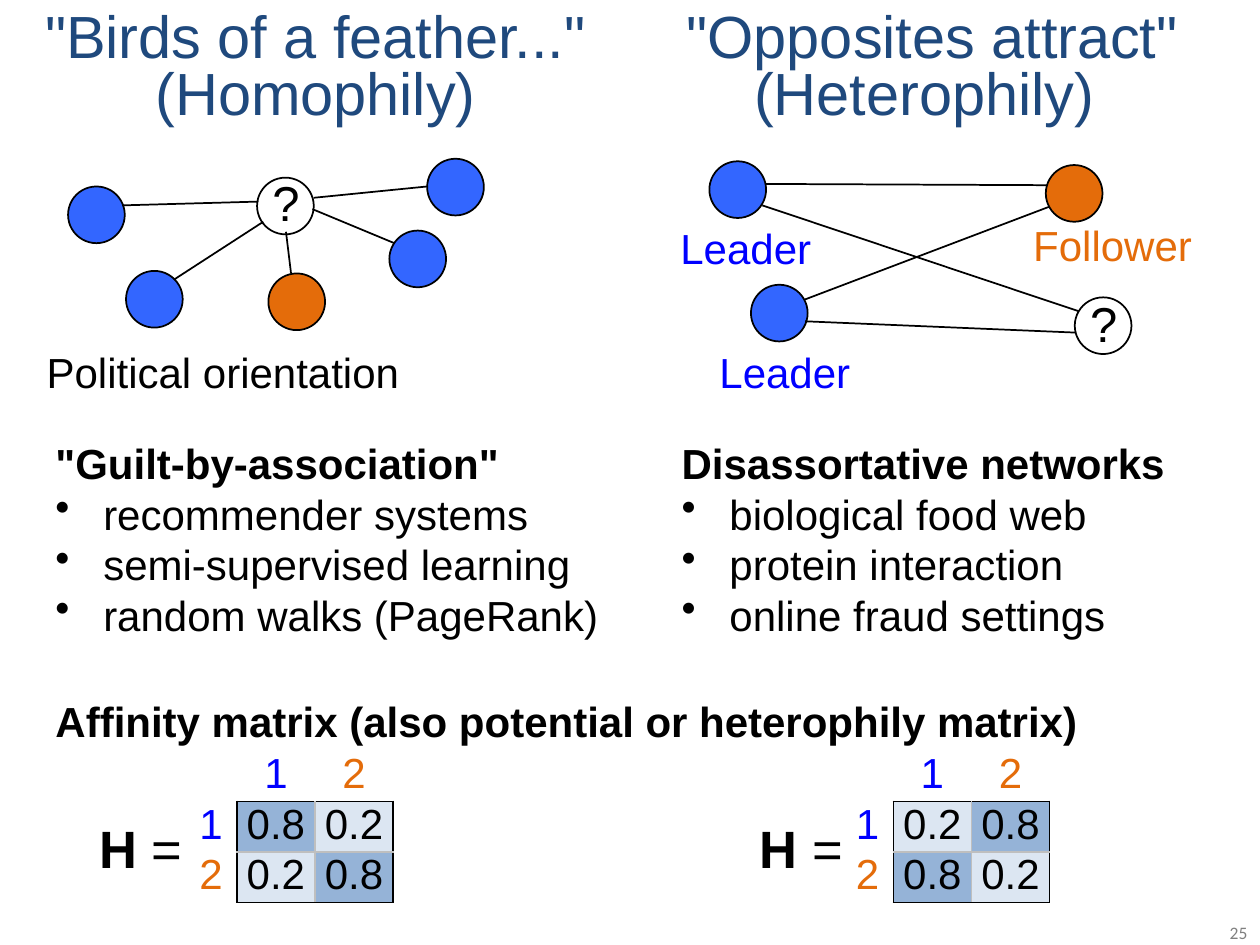
from lxml import etree
from pptx import Presentation
from pptx import util as u
from pptx.dml.color import RGBColor
from pptx.enum import shapes, text
from pptx.oxml.ns import qn

PX = 9144
BLACK, WHITE, GREY = "000000", "FFFFFF", "BFBFBF"
BLUE, ORANGE, NAVY = "0000FF", "E46C0A", "1F497D"
NODE, HIGH, LOW = "3366FF", "95B3D7", "DCE6F2"
LEFT, CENTER = text.PP_ALIGN.LEFT, text.PP_ALIGN.CENTER


def rgb(value):
    return RGBColor.from_string(value)


class Canvas:
    """Holds the style and the current slide, in hundredths of an inch."""

    font = "Arial"
    body = 24
    line_width = u.Pt(1)

    def __init__(self, page):
        self.page = page

    def lengths(self, *values):
        return [u.Emu(value * PX) for value in values]

    def style(self, span, size, color, bold=False, font=None):
        span.font.name = font or self.font
        span.font.size = u.Pt(size)
        span.font.bold = bold
        span.font.color.rgb = rgb(color)

    def label(self, at, words, size=body, color=BLACK, bold=False,
              align=LEFT, spacing=0.8, after=5.8, font=None):
        box = self.page.shapes.add_textbox(*self.lengths(*at))
        frame = box.text_frame
        frame.margin_left = frame.margin_right = 0
        frame.margin_top = frame.margin_bottom = 0
        frame.word_wrap = False
        frame.auto_size = text.MSO_AUTO_SIZE.SHAPE_TO_FIT_TEXT
        frame.text = words
        for para in frame.paragraphs:
            para.alignment = align
            para.line_spacing = spacing
            para.space_after = u.Pt(after)
            for span in para.runs:
                self.style(span, size, color, bold, font)
        return frame

    def topic(self, at, heading, items):
        frame = self.label(at, "\n".join([heading, *items]))
        first, *rest = frame.paragraphs
        first.runs[0].font.bold = True
        indent = 38 * PX
        for para in rest:
            properties = para._p.get_or_add_pPr()
            properties.set("marL", str(indent))
            properties.set("indent", str(-indent))
            etree.SubElement(properties, qn("a:buChar")).set("char", "•")

    def equation(self, at):
        para = self.label(at, "H", 30, bold=True).paragraphs[0]
        span = para.add_run()
        span.text = " ="
        self.style(span, 30, BLACK)

    def node(self, left, top, fill, size=45):
        circle = self.page.shapes.add_shape(
            shapes.MSO_SHAPE.OVAL, *self.lengths(left, top, size, size))
        circle.shadow.inherit = False
        circle.fill.solid()
        circle.fill.fore_color.rgb = rgb(fill)
        circle.line.color.rgb = rgb(BLACK)
        circle.line.width = self.line_width

    def edge(self, *ends):
        line = self.page.shapes.add_connector(
            shapes.MSO_CONNECTOR.STRAIGHT, *self.lengths(*ends))
        line.line.color.rgb = rgb(BLACK)
        line.line.width = self.line_width
        etree.SubElement(line._element.spPr, qn("a:effectLst"))

    def border(self, cell, **sides):
        properties = cell._tc.get_or_add_tcPr()
        ordered = [side for side in "LRTB" if side in sides]
        for index, side in enumerate(ordered):
            line = etree.Element(qn("a:ln" + side), w=str(self.line_width))
            fill = etree.SubElement(line, qn("a:solidFill"))
            etree.SubElement(fill, qn("a:srgbClr")).set("val", sides[side])
            properties.insert(index, line)

    def cell(self, cell, words, color, fill):
        cell.margin_left = cell.margin_right = 0
        cell.margin_top = cell.margin_bottom = 0
        cell.fill.solid()
        cell.fill.fore_color.rgb = rgb(fill)
        cell.text = words
        para = cell.text_frame.paragraphs[0]
        para.alignment = CENTER
        for span in para.runs:
            self.style(span, self.body, color)

    def matrix(self, left, top, values):
        widths, height = (41, 62, 62), 40
        table = self.page.shapes.add_table(
            3, 3, *self.lengths(left, top, sum(widths), 3 * height)).table
        table.first_row = table.horz_banding = False
        for column, width in zip(table.columns, widths):
            column.width = u.Emu(width * PX)
        for row in table.rows:
            row.height = u.Emu(height * PX)
        self.cell(table.cell(0, 0), "", BLACK, WHITE)
        for index, color in enumerate((BLUE, ORANGE), 1):
            header, side = table.cell(0, index), table.cell(index, 0)
            for cell in (header, side):
                self.cell(cell, str(index), color, WHITE)
            self.border(header, B=BLACK)
            self.border(side, R=BLACK)
        for r, row in enumerate(values, 1):
            for c, value in enumerate(row, 1):
                cell = table.cell(r, c)
                self.cell(cell, str(value), BLACK, HIGH if value > 0.5 else LOW)
                self.border(cell, L=BLACK if c == 1 else GREY,
                            R=BLACK if c == 2 else GREY,
                            T=BLACK if r == 1 else GREY,
                            B=BLACK if r == 2 else GREY)


def main():
    deck = Presentation()
    deck.slide_width, deck.slide_height = u.Inches(10), u.Inches(7.5)
    canvas = Canvas(deck.slides.add_slide(deck.slide_layouts[6]))

    titles = ((32, 437, '"Birds of a feather..."\v(Homophily)'),
              (543, 394, '"Opposites attract"\v(Heterophily) '))
    for left, width, words in titles:
        canvas.label((left, 10, width, 93), words, 34, NAVY,
                     align=CENTER, after=0)

    nodes = ((54, 148, NODE), (100, 215, NODE), (309, 183, NODE),
             (339, 126, NODE), (213, 217, ORANGE), (204, 141, WHITE),
             (563, 128, NODE), (596, 226, NODE), (830, 131, ORANGE),
             (853, 236, WHITE))
    for node in nodes:
        canvas.node(*node)

    edges = ((97, 163, 205, 160), (209, 176, 138, 222), (248, 166, 313, 193),
             (249, 157, 339, 148), (227, 184, 231, 217),
             (608, 146, 831, 147), (605, 163, 856, 247),
             (638, 238, 833, 164), (639, 255, 854, 264))
    for edge in edges:
        canvas.edge(*edge)

    for left, top in ((216, 137), (865, 233)):
        canvas.label((left, top, 22, 47), "?", 28, align=CENTER, spacing=1)

    canvas.label((37, 283, 283, 34), "Political orientation")
    canvas.label((540, 184, 105, 34), "Leader", color=BLUE)
    canvas.label((571, 283, 105, 34), "Leader", color=BLUE)
    canvas.label((820, 182, 128, 34), "Follower", color=ORANGE)

    canvas.topic((44, 355, 433, 155), '"Guilt-by-association"',
                 ["recommender systems", "semi-supervised learning",
                  "random walks (PageRank)"])
    canvas.topic((541, 355, 387, 155), "Disassortative networks",
                 ["biological food web", "protein interaction",
                  "online fraud settings"])

    canvas.matrix(147, 596, ((0.8, 0.2), (0.2, 0.8)))
    canvas.matrix(668, 596, ((0.2, 0.8), (0.8, 0.2)))
    canvas.label((44, 560, 819, 34),
                 "Affinity matrix (also potential or heterophily matrix)",
                 bold=True)
    for left in (79, 603):
        canvas.equation((left, 657, 67, 42))
    canvas.label((976, 732, 16, 17), "25", 10, "808080",
                 spacing=1, after=0, font="Calibri")

    deck.save("out.pptx")


if __name__ == "__main__":
    main()
